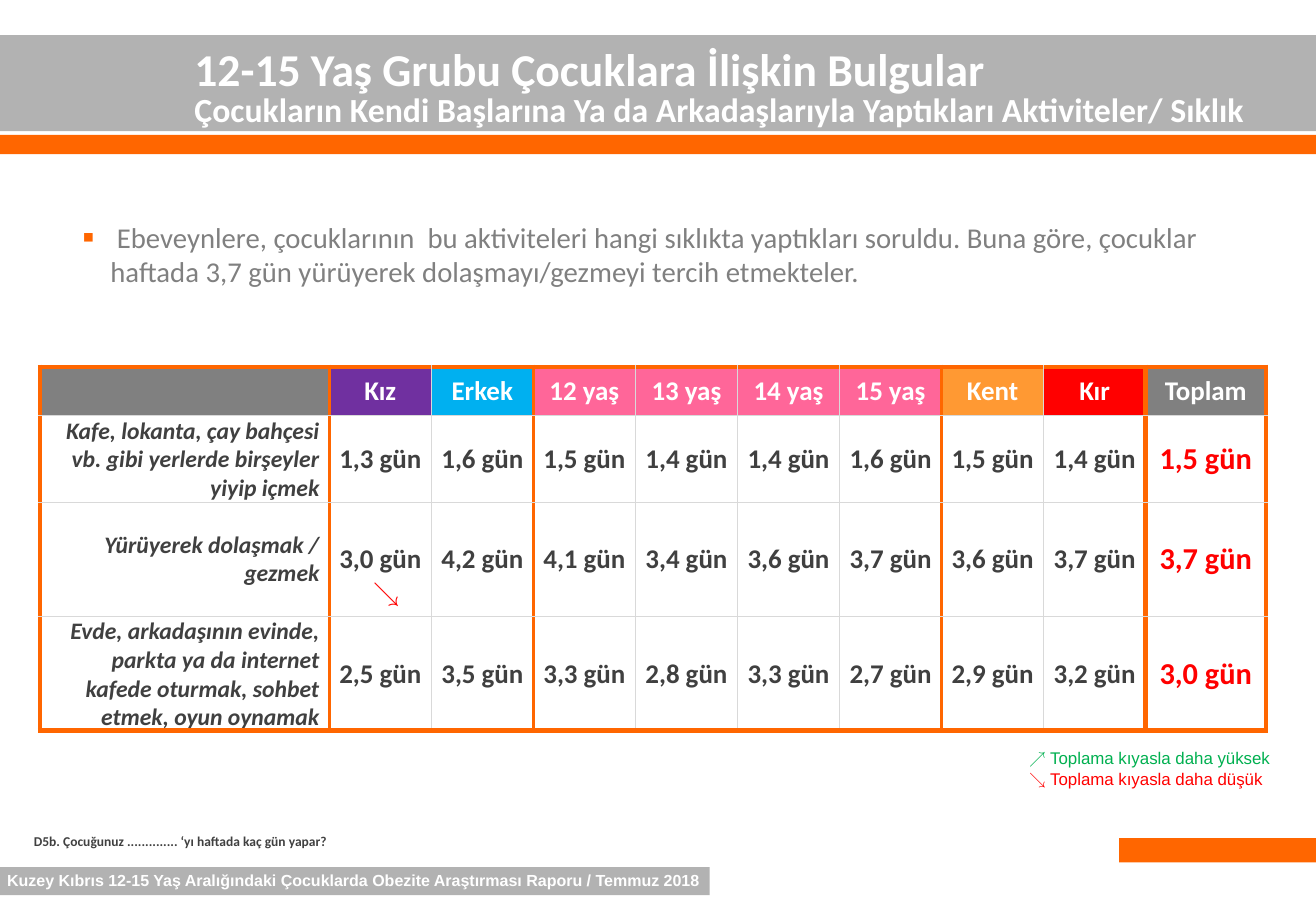
from lxml.etree import SubElement
from pptx import Presentation
from pptx.dml.color import RGBColor
from pptx.enum.shapes import MSO_SHAPE
from pptx.enum.text import MSO_ANCHOR, PP_ALIGN
from pptx.oxml.ns import qn
from pptx.util import Inches, Pt

COLORS = {
    "band": "B2B2B2", "orange": "FF6600", "white": "FFFFFF", "gray": "808080",
    "dark": "404040", "grid": "D9D9D9", "red": "FF0000", "green": "00B050",
    "purple": "7030A0", "blue": "00B0F0", "pink": "FF6699", "amber": "FF9933",
}
HEADERS = [
    ("", "gray"), ("Kız", "purple"), ("Erkek", "blue"),
    ("12 yaş", "pink"), ("13 yaş", "pink"), ("14 yaş", "pink"), ("15 yaş", "pink"),
    ("Kent", "amber"), ("Kır", "red"), ("Toplam", "gray"),
]
ACTIVITIES = [
    ("Kafe, lokanta, çay bahçesi vb. gibi yerlerde birşeyler yiyip içmek",
     "1,3 1,6 1,5 1,4 1,4 1,6 1,5 1,4 1,5"),
    ("Yürüyerek dolaşmak / gezmek",
     "3,0 4,2 4,1 3,4 3,6 3,7 3,6 3,7 3,7"),
    ("Evde, arkadaşının evinde, parkta ya da internet kafede oturmak, sohbet etmek, oyun oynamak",
     "2,5 3,5 3,3 2,8 3,3 2,7 2,9 3,2 3,0"),
]
COLUMN_WIDTHS = [2.38] + [0.84] * 8 + [0.99]
ROW_HEIGHTS = [0.4, 0.71, 0.94, 0.94]
COLUMN_RULES = {0: 3, 1: 2.25, 3: 2.25, 7: 2.25, 9: 3, 10: 3}
ROW_RULES = {0: 3, 4: 3}


def color(name):
    """Return the named colour."""
    return RGBColor.from_string(COLORS[name])


def write(para, text, *, size, ink, font="Calibri", bold=False, italic=False,
          align=PP_ALIGN.LEFT, line=None):
    """Put formatted text in a paragraph."""
    para.alignment = align
    if line:
        para.line_spacing = Pt(line)
    span = para.add_run()
    span.text = text
    span.font.size = Pt(size)
    span.font.name = font
    span.font.bold = bold
    span.font.italic = italic
    span.font.color.rgb = color(ink)


def add_border(cell, side, weight):
    """Draw one side of a cell: orange with a weight, thin grey without."""
    border = SubElement(cell._tc.get_or_add_tcPr(), qn(f"a:ln{side}"), w=str(Pt(weight or 0.25)))
    fill = SubElement(border, qn("a:solidFill"))
    SubElement(fill, qn("a:srgbClr"), val=COLORS["orange" if weight else "grid"])


def add_bullet(para, indent):
    """Give a paragraph a square orange bullet and a hanging indent."""
    properties = para._p.get_or_add_pPr()
    properties.set("marL", str(Inches(indent)))
    properties.set("indent", str(Inches(-indent)))
    SubElement(SubElement(properties, qn("a:buClr")), qn("a:srgbClr"), val=COLORS["orange"])
    SubElement(properties, qn("a:buSzPct"), val="120000")
    SubElement(properties, qn("a:buFont"), typeface="Arial")
    SubElement(properties, qn("a:buChar"), char="▪")


class SlideBuilder:
    """Holds the current slide and its style."""

    def __init__(self, page):
        """Keep the page to draw on."""
        self.page = page

    def bar(self, left, top, width, height, fill):
        """Add a plain filled bar."""
        shape = self.page.shapes.add_shape(
            MSO_SHAPE.RECTANGLE, Inches(left), Inches(top), Inches(width), Inches(height))
        shape.shadow.inherit = False
        shape.fill.solid()
        shape.fill.fore_color.rgb = color(fill)
        shape.line.fill.background()

    def title(self, left, top, width, height, lines):
        """Place the title and write its lines of (text, size)."""
        box = self.page.shapes.title
        box.left, box.top = Inches(left), Inches(top)
        box.width, box.height = Inches(width), Inches(height)
        frame = box.text_frame
        frame.word_wrap = False
        frame.vertical_anchor = MSO_ANCHOR.TOP
        for index, (text, size) in enumerate(lines):
            para = frame.add_paragraph() if index else frame.paragraphs[0]
            write(para, text, size=size, ink="white", bold=True, line=20)

    def text(self, left, top, width, height, lines, wrap=False, bullet=None, **style):
        """Add a text box with lines of (text, ink)."""
        box = self.page.shapes.add_textbox(
            Inches(left), Inches(top), Inches(width), Inches(height))
        frame = box.text_frame
        frame.word_wrap = wrap
        for index, (text, ink) in enumerate(lines):
            para = frame.add_paragraph() if index else frame.paragraphs[0]
            if bullet:
                add_bullet(para, bullet)
            write(para, text, ink=ink, **style)

    def cell(self, table, row, column, text, fill=None, side_margin=(0.01, 0.01), **style):
        """Format one table cell and its borders."""
        cell = table.cell(row, column)
        cell.vertical_anchor = MSO_ANCHOR.MIDDLE
        cell.margin_left, cell.margin_right = map(Inches, side_margin)
        cell.margin_top, cell.margin_bottom = Inches(0.01), 0
        add_border(cell, "L", COLUMN_RULES.get(column))
        add_border(cell, "R", COLUMN_RULES.get(column + 1))
        add_border(cell, "T", ROW_RULES.get(row))
        add_border(cell, "B", ROW_RULES.get(row + 1))
        if fill:
            cell.fill.solid()
            cell.fill.fore_color.rgb = color(fill)
        else:
            cell.fill.background()
        if text:
            write(cell.text_frame.paragraphs[0], text, bold=True, **style)

    def table(self, left, top):
        """Add the table of days per week for each activity."""
        table = self.page.shapes.add_table(
            len(ROW_HEIGHTS), len(COLUMN_WIDTHS), Inches(left), Inches(top),
            Inches(sum(COLUMN_WIDTHS)), Inches(sum(ROW_HEIGHTS))).table
        table.first_row = table.horz_banding = False
        for column, width in zip(table.columns, COLUMN_WIDTHS):
            column.width = Inches(width)
        for row, height in zip(table.rows, ROW_HEIGHTS):
            row.height = Inches(height)
        for column, (text, fill) in enumerate(HEADERS):
            self.cell(table, 0, column, text, fill, size=16, ink="white", align=PP_ALIGN.CENTER)
        for row, (label, days) in enumerate(ACTIVITIES, 1):
            self.cell(table, row, 0, label, side_margin=(0.04, 0.08), size=14, ink="dark",
                      italic=True, align=PP_ALIGN.RIGHT)
            for column, value in enumerate(days.split(), 1):
                total = column == len(HEADERS) - 1
                self.cell(table, row, column, f"{value} gün", size=18 if total else 16,
                          ink="red" if total else "dark", align=PP_ALIGN.CENTER)


def main():
    """Build and save the slide."""
    deck = Presentation()
    deck.slide_width, deck.slide_height = Inches(10.83), Inches(7.5)
    page = deck.slides.add_slide(deck.slide_layouts[5])
    builder = SlideBuilder(page)

    builder.bar(0, 0.29, 10.83, 0.79, "band")
    builder.bar(0, 1.11, 10.83, 0.16, "orange")
    builder.bar(9.21, 6.9, 1.62, 0.2, "orange")
    builder.bar(0, 7.14, 5.84, 0.23, "band")
    builder.text(-0.04, 7.12, 5.98, 0.26, [
        ("Kuzey Kıbrıs 12-15 Yaş Aralığındaki Çocuklarda Obezite Araştırması Raporu / Temmuz 2018",
         "white")], size=9.5, font="Arial", bold=True)

    builder.title(1.5, 0.46, 8.98, 0.66, [
        ("12-15 Yaş Grubu Çocuklara İlişkin Bulgular", 27),
        ("Çocukların Kendi Başlarına Ya da Arkadaşlarıyla Yaptıkları Aktiviteler/ Sıklık", 20)])
    page.shapes._spTree.append(page.shapes.title._element)
    builder.text(0.58, 1.76, 9.61, 0.96, [
        (" Ebeveynlere, çocuklarının  bu aktiviteleri hangi sıklıkta yaptıkları soruldu. "
         "Buna göre, çocuklar haftada 3,7 gün yürüyerek dolaşmayı/gezmeyi tercih etmekteler.",
         "gray")], wrap=True, bullet=0.23, size=17)
    builder.table(0.33, 3.02)
    builder.text(8.37, 6.11, 2.2, 0.44, [
        ("↗ Toplama kıyasla daha yüksek", "green"),
        ("↘ Toplama kıyasla daha düşük", "red")], size=10, font="Arial")
    builder.text(0.18, 6.81, 7.42, 0.24, [
        ("D5b. Çocuğunuz .............. ‘yı haftada kaç gün yapar?", "dark")],
        wrap=True, size=8, bold=True)
    builder.text(2.97, 4.69, 0.4, 0.37, [("↘", "red")], size=16, font="Arial")
    deck.save("out.pptx")


if __name__ == "__main__":
    main()
